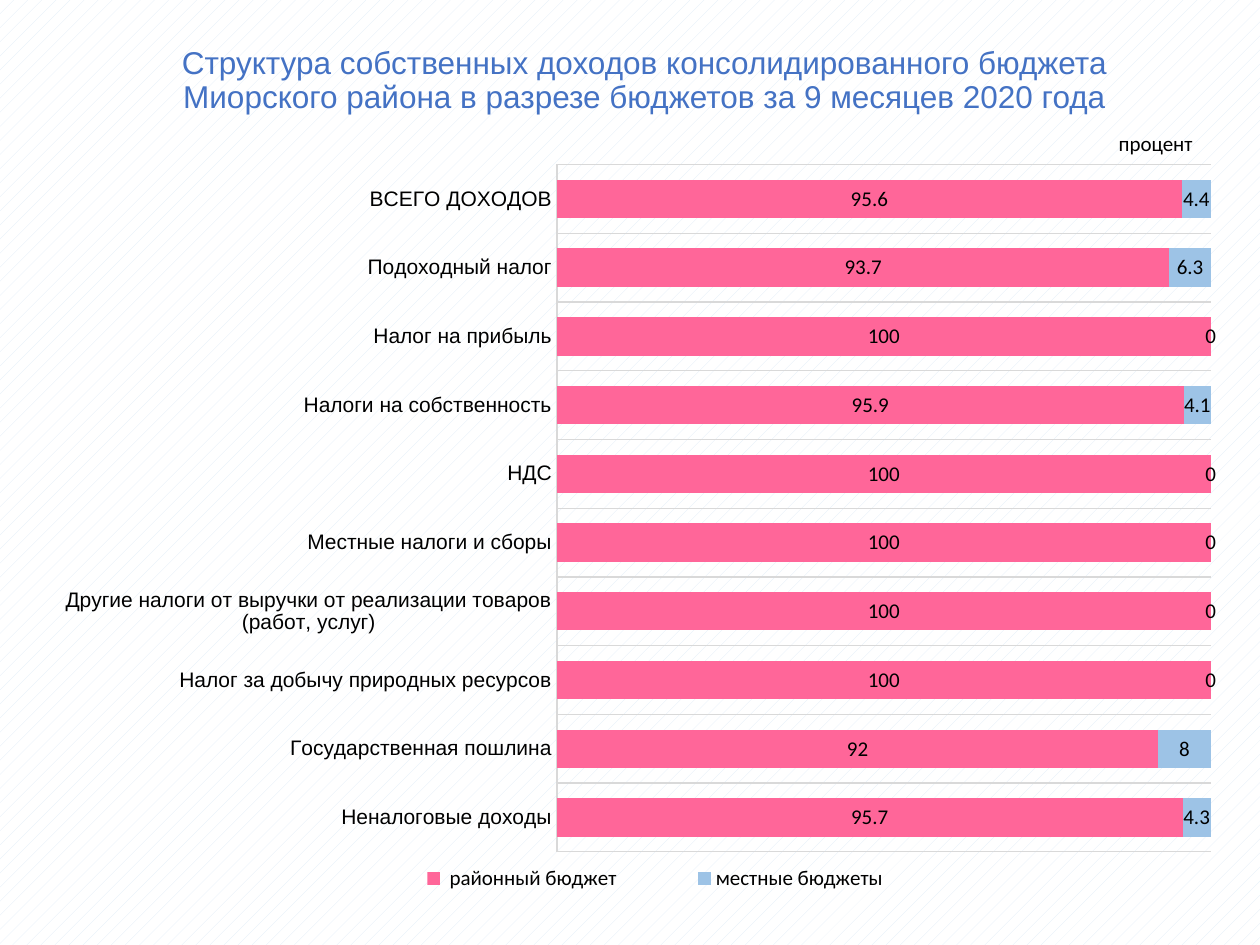
from lxml import etree
from pptx import Presentation
from pptx import util as u
from pptx.chart.data import CategoryChartData
from pptx.dml.color import RGBColor
from pptx.enum import chart as ch, dml, text
from pptx.oxml.ns import qn

COLORS = {"title": "4472C4", "text": "000000", "grid": "D9D9D9",
          "district": "FF6699", "local": "9DC3E6",
          "pattern": "DEEBF7", "paper": "FFFFFF"}
TITLE = ("Структура собственных доходов консолидированного бюджета "
         "Миорского района в разрезе бюджетов за 9 месяцев 2020 года")
UNIT = "процент"
SERIES = [(" районный бюджет", "district"), ("местные бюджеты", "local")]
# Category, district share, local share; bottom bar first
SHARES = [
    ("Неналоговые доходы", 95.7, 4.3),
    ("Государственная пошлина", 92, 8),
    ("Налог за добычу природных ресурсов", 100, 0),
    ("Другие налоги от выручки от реализации товаров (работ, услуг)", 100, 0),
    ("Местные налоги и сборы", 100, 0),
    ("НДС", 100, 0),
    ("Налоги на собственность", 95.9, 4.1),
    ("Налог на прибыль", 100, 0),
    ("Подоходный налог", 93.7, 6.3),
    ("ВСЕГО ДОХОДОВ", 95.6, 4.4),
]
PLOT_AREA = (0.442, 0.001, 0.519, 0.88)
LEGEND_AREA = (0.28, 0.89, 0.48, 0.05)


def color(name):
    return RGBColor.from_string(COLORS[name])


def style_font(font, name, size, tint):
    font.name, font.size = name, u.Pt(size)
    font.color.rgb = color(tint)


def add_text(page, area, content, name, size, tint):
    box = page.shapes.add_textbox(*map(u.Inches, area))
    frame = box.text_frame
    frame.word_wrap = True
    frame.text = content
    style_font(frame.paragraphs[0].runs[0].font, name, size, tint)
    return frame


def set_layout(element, area, after=None, inner=False):
    """Place a chart part by fractions of the chart's size."""
    for old in element.findall(qn("c:layout")):
        element.remove(old)
    layout = etree.Element(qn("c:layout"))
    manual = etree.SubElement(layout, qn("c:manualLayout"))
    settings = [("layoutTarget", "inner")] if inner else []
    settings += [("xMode", "edge"), ("yMode", "edge")]
    settings += zip("xywh", area)
    for tag, value in settings:
        etree.SubElement(manual, qn(f"c:{tag}")).set("val", str(value))
    if after is None:
        element.insert(0, layout)
    else:
        after.addnext(layout)


def add_shares_chart(page):
    data = CategoryChartData()
    data.categories = [row[0] for row in SHARES]
    for column, (name, _) in enumerate(SERIES, 1):
        data.add_series(name, [row[column] for row in SHARES])
    area = map(u.Inches, (0, 1.3, 10, 6.2))
    chart = page.shapes.add_chart(ch.XL_CHART_TYPE.BAR_STACKED_100, *area, data).chart
    chart.has_title = False
    style_font(chart.font, "Calibri", 12, "text")

    plot = chart.plots[0]
    plot.gap_width, plot.overlap, plot.vary_by_categories = 79, 100, False
    for series, (_, tint) in zip(plot.series, SERIES):
        series.format.fill.solid()
        series.format.fill.fore_color.rgb = color(tint)
        labels = series.data_labels
        labels.show_value = True
        style_font(labels.font, "Calibri", 12, "text")

    axis = chart.category_axis
    axis.major_tick_mark = axis.minor_tick_mark = ch.XL_TICK_MARK.NONE
    axis.has_major_gridlines = True
    style_font(axis.tick_labels.font, "Arial", 12, "text")
    for line in (axis.format.line, axis.major_gridlines.format.line):
        line.color.rgb = color("grid")
        line.width = u.Pt(0.75)
    chart.value_axis.has_major_gridlines = False
    chart.value_axis.visible = False

    chart.has_legend = True
    legend = chart.legend
    legend.position = ch.XL_LEGEND_POSITION.TOP
    legend.include_in_layout = False
    style_font(legend.font, "Calibri", 12, "text")
    position = legend._element.find(qn("c:legendPos"))
    set_layout(legend._element, LEGEND_AREA, after=position)
    set_layout(chart._chartSpace.chart.plotArea, PLOT_AREA, inner=True)


def main():
    deck = Presentation()
    deck.slide_width, deck.slide_height = u.Inches(10), u.Inches(7.5)
    page = deck.slides.add_slide(deck.slide_layouts[6])
    fill = page.background.fill
    fill.patterned()
    fill.pattern = dml.MSO_PATTERN.PERCENT_10
    fill.fore_color.rgb = color("pattern")
    fill.back_color.rgb = color("paper")

    title = add_text(page, (1.06, 0.29, 8.11, 0.71), TITLE, "Arial", 18, "title")
    title.vertical_anchor = text.MSO_ANCHOR.MIDDLE
    title.paragraphs[0].alignment = text.PP_ALIGN.CENTER
    title.paragraphs[0].line_spacing = 0.9
    add_shares_chart(page)
    unit = add_text(page, (8.78, 0.99, 1.22, 0.3), UNIT, "Calibri", 12, "text")
    unit.auto_size = text.MSO_AUTO_SIZE.SHAPE_TO_FIT_TEXT
    deck.save("out.pptx")


if __name__ == "__main__":
    main()
